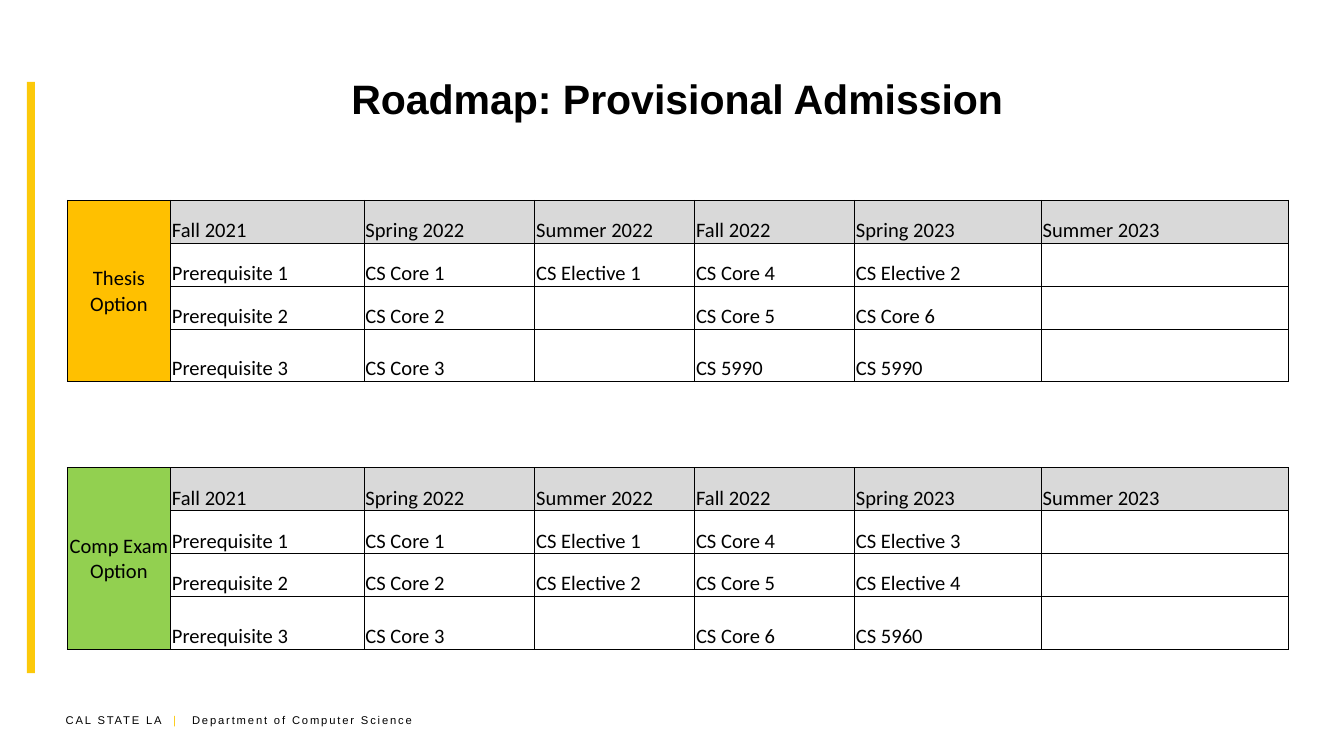
from dataclasses import dataclass

import lxml.etree
import pptx
import pptx.dml.color
import pptx.enum.shapes
import pptx.enum.text
import pptx.oxml.ns
import pptx.util

Inches = pptx.util.Inches
Pt = pptx.util.Pt
qn = pptx.oxml.ns.qn
ALIGN = pptx.enum.text.PP_ALIGN
ANCHOR = pptx.enum.text.MSO_ANCHOR

BLACK = "000000"
GOLD = "FCC90A"
TERM_GREY = "D9D9D9"
COLUMN_WIDTHS = (0.77, 1.44, 1.27, 1.19, 1.19, 1.39, 1.84)
ROW_HEIGHTS = (0.32, 0.32, 0.32, 0.39)
TERMS = ("Fall 2021", "Spring 2022", "Summer 2022", "Fall 2022", "Spring 2023", "Summer 2023")


@dataclass(frozen=True)
class Roadmap:
    option: str
    color: str
    top: float
    courses: tuple[tuple[str, ...], ...]


ROADMAPS = (
    Roadmap("Thesis Option", "FFC000", 1.49, (
        ("Prerequisite 1", "CS Core 1", "CS Elective 1", "CS Core 4", "CS Elective 2", ""),
        ("Prerequisite 2", "CS Core 2", "", "CS Core 5", "CS Core 6", ""),
        ("Prerequisite 3", "CS Core 3", "", "CS 5990", "CS 5990", ""),
    )),
    Roadmap("Comp Exam Option", "92D050", 3.48, (
        ("Prerequisite 1", "CS Core 1", "CS Elective 1", "CS Core 4", "CS Elective 3", ""),
        ("Prerequisite 2", "CS Core 2", "CS Elective 2", "CS Core 5", "CS Elective 4", ""),
        ("Prerequisite 3", "CS Core 3", "", "CS Core 6", "CS 5960", ""),
    )),
)


def rgb(value: str) -> pptx.dml.color.RGBColor:
    return pptx.dml.color.RGBColor.from_string(value)


def add_run(paragraph, text: str, font: str, size: float, color: str = BLACK, bold: bool = False):
    run = paragraph.add_run()
    run.text = text
    run.font.name = font
    run.font.size = Pt(size)
    run.font.bold = bold
    run.font.color.rgb = rgb(color)
    return run


def add_borders(cell) -> None:
    properties = cell._tc.get_or_add_tcPr()
    for side in ("lnL", "lnR", "lnT", "lnB"):
        line = lxml.etree.SubElement(properties, qn(f"a:{side}"), w=str(Pt(0.5)))
        fill = lxml.etree.SubElement(line, qn("a:solidFill"))
        lxml.etree.SubElement(fill, qn("a:srgbClr"), val=BLACK)


def format_cell(cell, text: str, color: str = "", centered: bool = False) -> None:
    cell.margin_left = cell.margin_right = cell.margin_top = Inches(0.01)
    cell.margin_bottom = 0
    cell.vertical_anchor = ANCHOR.MIDDLE if centered else ANCHOR.BOTTOM
    add_borders(cell)
    if color:
        cell.fill.solid()
        cell.fill.fore_color.rgb = rgb(color)
    else:
        cell.fill.background()
    if text:
        paragraph = cell.text_frame.paragraphs[0]
        paragraph.alignment = ALIGN.CENTER if centered else ALIGN.LEFT
        add_run(paragraph, text, "Calibri", 11)


def add_roadmap(slide, roadmap: Roadmap) -> None:
    table = slide.shapes.add_table(
        len(ROW_HEIGHTS), len(COLUMN_WIDTHS), Inches(0.5), Inches(roadmap.top),
        Inches(sum(COLUMN_WIDTHS)), Inches(sum(ROW_HEIGHTS))).table
    table.first_row = table.horz_banding = False
    for column, width in zip(table.columns, COLUMN_WIDTHS):
        column.width = Inches(width)
    for row, height in zip(table.rows, ROW_HEIGHTS):
        row.height = Inches(height)
    table.cell(0, 0).merge(table.cell(len(ROW_HEIGHTS) - 1, 0))
    for row_index, texts in enumerate((TERMS, *roadmap.courses)):
        option = roadmap.option if row_index == 0 else ""
        format_cell(table.cell(row_index, 0), option, roadmap.color, centered=True)
        for column_index, text in enumerate(texts, start=1):
            color = TERM_GREY if row_index == 0 else ""
            format_cell(table.cell(row_index, column_index), text, color)


def add_accent_bar(slide) -> None:
    bar = slide.shapes.add_shape(
        pptx.enum.shapes.MSO_SHAPE.RECTANGLE, Inches(0.2), Inches(0.61), Inches(0.06), Inches(4.4))
    bar.shadow.inherit = False
    bar.fill.solid()
    bar.fill.fore_color.rgb = rgb(GOLD)
    bar.line.fill.background()


def add_department_line(slide) -> None:
    department = slide.shapes.add_textbox(Inches(0.39), Inches(5.26), Inches(2.92), Inches(0.2))
    department.text_frame.word_wrap = True
    paragraph = department.text_frame.paragraphs[0]
    tabs = lxml.etree.SubElement(paragraph._p.get_or_add_pPr(), qn("a:tabLst"))
    for position in (0.8, 0.94):
        lxml.etree.SubElement(tabs, qn("a:tab"), pos=str(Inches(position)), algn="l")
    for text, color in (("CAL STATE LA", BLACK), ("\t|\t", GOLD),
                        ("Department of Computer Science", BLACK)):
        run = add_run(paragraph, text, "Arial", 6, color)
        run.font._element.set("spc", "100")


def set_title(slide) -> None:
    title = slide.shapes.title
    title.left, title.top = Inches(0.59), Inches(0.26)
    title.width, title.height = Inches(8.9), Inches(0.94)
    title.text_frame.vertical_anchor = ANCHOR.MIDDLE
    paragraph = title.text_frame.paragraphs[0]
    paragraph.alignment = ALIGN.CENTER
    add_run(paragraph, "Roadmap: Provisional Admission", "Arial", 22, bold=True)


def main() -> None:
    presentation = pptx.Presentation()
    presentation.slide_width = Inches(10)
    presentation.slide_height = presentation.slide_width * 9 // 16
    slide = presentation.slides.add_slide(presentation.slide_layouts[5])
    add_department_line(slide)
    add_accent_bar(slide)
    set_title(slide)
    for roadmap in ROADMAPS:
        add_roadmap(slide, roadmap)
    presentation.save("out.pptx")


if __name__ == "__main__":
    main()
